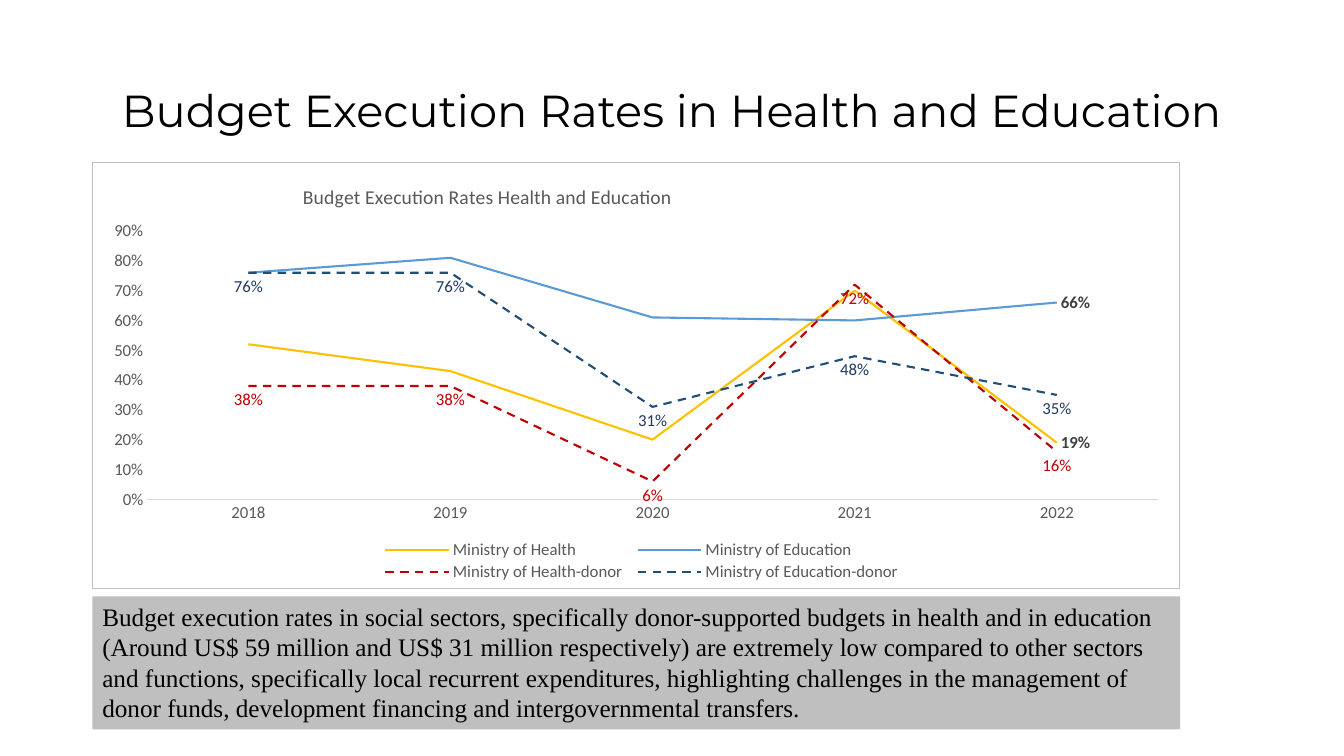
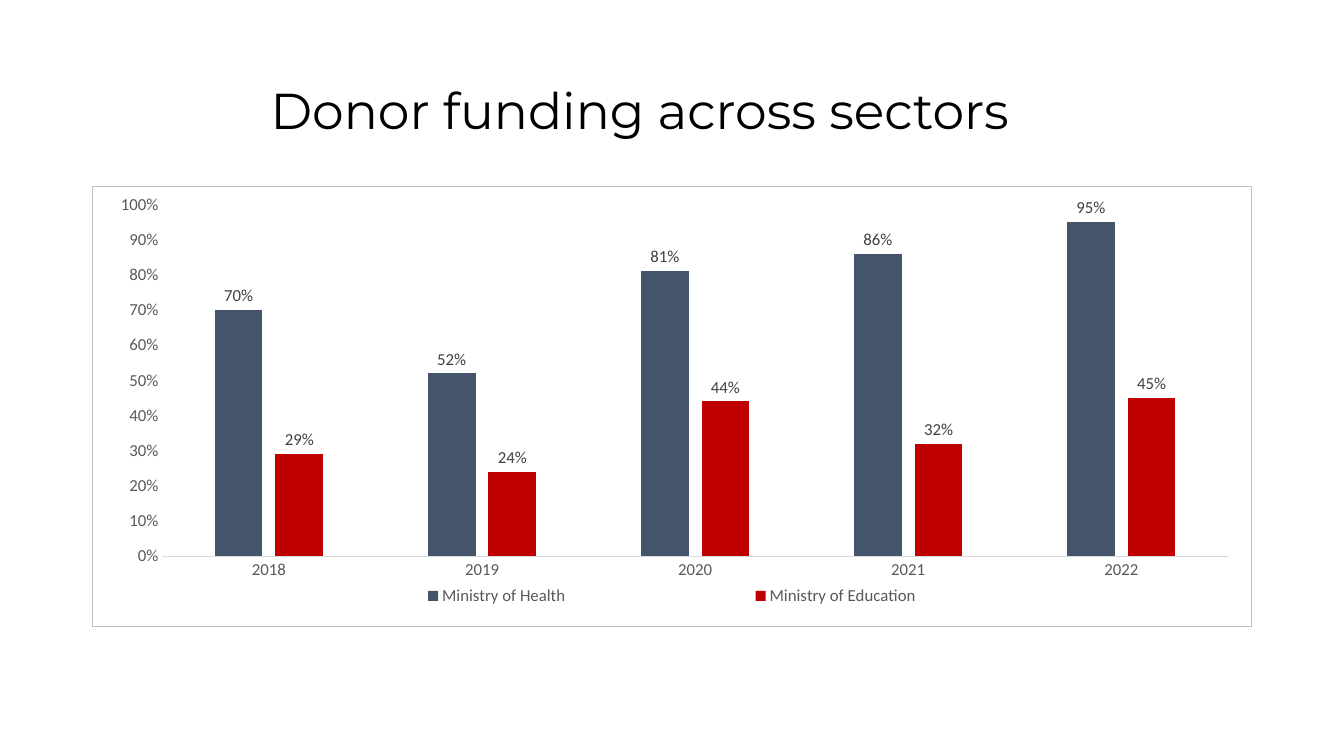
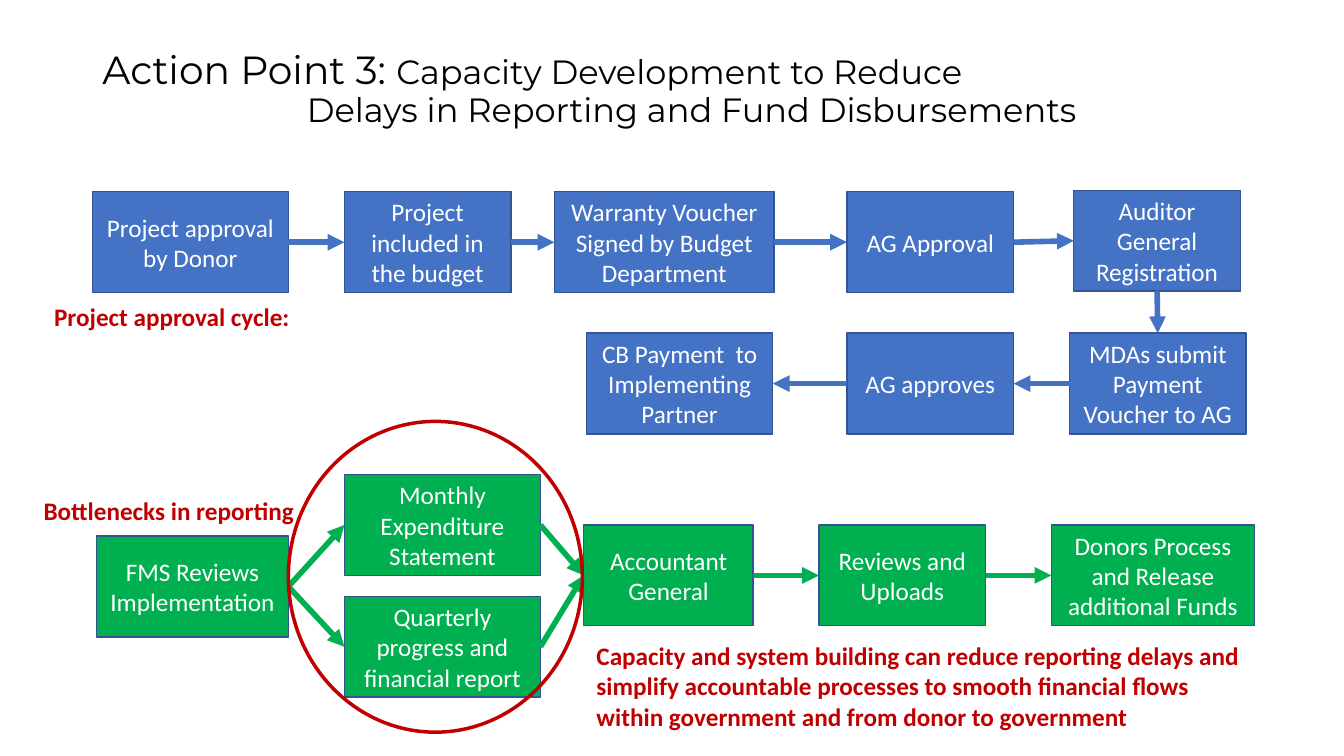
from dataclasses import dataclass

from lxml import etree
from pptx import Presentation
from pptx.chart.data import CategoryChartData
from pptx.dml.color import RGBColor
from pptx.enum.chart import (XL_CHART_TYPE, XL_LABEL_POSITION, XL_LEGEND_POSITION,
                             XL_MARKER_STYLE, XL_TICK_MARK)
from pptx.enum.dml import MSO_LINE
from pptx.enum.shapes import MSO_CONNECTOR, MSO_SHAPE
from pptx.enum.text import MSO_ANCHOR, MSO_AUTO_SIZE, PP_ALIGN
from pptx.oxml import parse_xml
from pptx.oxml.ns import nsdecls, qn
from pptx.util import Pt

LINE, COLUMN = XL_CHART_TYPE.LINE, XL_CHART_TYPE.COLUMN_CLUSTERED
BELOW, RIGHT_OF = XL_LABEL_POSITION.BELOW, XL_LABEL_POSITION.RIGHT
ABOVE = XL_LABEL_POSITION.OUTSIDE_END
BOTTOM, NO_TICK = XL_LEGEND_POSITION.BOTTOM, XL_TICK_MARK.NONE
NO_MARK, DASH = XL_MARKER_STYLE.NONE, MSO_LINE.DASH
STRAIGHT = MSO_CONNECTOR.STRAIGHT
RECT, OVAL = MSO_SHAPE.RECTANGLE, MSO_SHAPE.OVAL
MIDDLE, NO_FIT = MSO_ANCHOR.MIDDLE, MSO_AUTO_SIZE.NONE
LEFT, CENTER = PP_ALIGN.LEFT, PP_ALIGN.CENTER
SITE_TOP, SITE_LEFT, SITE_BOTTOM, SITE_RIGHT = range(4)


@dataclass(frozen=True)
class Theme:
    head: str = "Montserrat"
    body: str = "Calibri"
    serif: str = "Times New Roman"
    black: str = "000000"
    white: str = "FFFFFF"
    gray: str = "BFBFBF"
    axis: str = "D9D9D9"
    soft: str = "595959"
    dark: str = "404040"
    red: str = "C00000"
    gold: str = "FFC000"
    sky: str = "5B9BD5"
    navy: str = "1F4E79"
    ink: str = "203864"
    slate: str = "44546A"
    blue: str = "4472C4"
    edge: str = "325491"
    green: str = "00B050"
    text: float = 18
    small: float = 12
    mid: float = 14


T = Theme()
YEARS = ["2018", "2019", "2020", "2021", "2022"]


def rgb(code):
    return RGBColor.from_string(code)


def style(font, size, color, name=T.body, bold=False):
    font.size, font.name, font.bold = Pt(size), name, bold
    font.color.rgb = rgb(color)


def place(part, index, x, y, w=None, h=None):
    """Give a chart part a manual layout, in fractions of the chart."""
    old = part.find(qn("c:layout"))
    if old is not None:
        part.remove(old)
    lay = etree.Element(qn("c:layout"))
    box = etree.SubElement(lay, qn("c:manualLayout"))
    items = [("xMode", "edge"), ("yMode", "edge"), ("x", x), ("y", y)]
    if w:
        items += [("w", w), ("h", h)]
    if part.tag == qn("c:plotArea"):
        items.insert(0, ("layoutTarget", "inner"))
    for tag, val in items:
        etree.SubElement(box, qn("c:" + tag)).set("val", str(val))
    part.insert(index, lay)


class Deck:
    def __init__(self):
        self.prs = Presentation()
        self.prs.slide_width, self.prs.slide_height = Pt(960), Pt(540)
        self.slide = None

    def page(self, at, lines, align=CENTER):
        """Add a slide; each title line is (indent, [(text, size), ...])."""
        self.slide = self.prs.slides.add_slide(self.prs.slide_layouts[5])
        title = self.slide.shapes.title
        title.left, title.top, title.width, title.height = map(Pt, at)
        frame = title.text_frame
        frame.word_wrap, frame.auto_size = True, NO_FIT
        frame.vertical_anchor = MIDDLE
        for i, (indent, parts) in enumerate(lines):
            para = frame.add_paragraph() if i else frame.paragraphs[0]
            para.alignment, para.line_spacing = align, 0.9
            para._p.get_or_add_pPr().set("marL", str(Pt(indent)))
            for text, size in parts:
                run = para.add_run()
                run.text = text
                style(run.font, size, T.black, T.head)

    def text(self, at, words, color=T.red, font=T.body, bold=True, fill=None):
        box = self.slide.shapes.add_textbox(*map(Pt, at))
        if fill:
            box.fill.solid()
            box.fill.fore_color.rgb = rgb(fill)
        frame = box.text_frame
        frame.word_wrap, frame.text = True, words
        style(frame.paragraphs[0].runs[0].font, T.text, color, font, bold)

    def shape(self, kind, at, fill, edge, width):
        item = self.slide.shapes.add_shape(kind, *map(Pt, at))
        item.shadow.inherit = False
        if fill:
            item.fill.solid()
            item.fill.fore_color.rgb = rgb(fill)
        else:
            item.fill.background()
        item.line.color.rgb, item.line.width = rgb(edge), Pt(width)
        return item

    def step(self, words, x, y, width, color):
        box = self.shape(RECT, (x, y, width, 72), color, T.edge, 1)
        frame = box.text_frame
        frame.word_wrap, frame.text = True, words
        frame.vertical_anchor = MIDDLE
        para = frame.paragraphs[0]
        para.alignment = CENTER
        style(para.runs[0].font, T.text, T.white)
        return box

    def arrow(self, start, end, color, out=SITE_RIGHT, into=SITE_LEFT):
        link = self.slide.shapes.add_connector(STRAIGHT, 0, 0, 0, 0)
        link.begin_connect(start, out)
        link.end_connect(end, into)
        link.line.color.rgb, link.line.width = rgb(color), Pt(4)
        tail = etree.SubElement(link.line._get_or_add_ln(), qn("a:tailEnd"))
        tail.set("type", "triangle")
        etree.SubElement(link._element.spPr, qn("a:effectLst"))

    def chart(self, kind, at, rows, top, plot, key):
        """Add a framed percent chart; plot and key are layout fractions."""
        data = CategoryChartData(number_format="0%")
        data.categories = YEARS
        for name, vals in rows:
            data.add_series(name, vals)
        chart = self.slide.shapes.add_chart(kind, *map(Pt, at), data).chart
        style(chart.font, T.small, T.black)
        chart.has_title = False
        chart.has_legend = True
        legend = chart.legend
        legend.position, legend.include_in_layout = BOTTOM, False
        style(legend.font, T.small, T.soft)
        cats, vals = chart.category_axis, chart.value_axis
        for axis in (cats, vals):
            axis.major_tick_mark = axis.minor_tick_mark = NO_TICK
            axis.has_major_gridlines = False
            style(axis.tick_labels.font, T.small, T.soft)
        cats.format.line.color.rgb = rgb(T.axis)
        cats.format.line.width = Pt(0.75)
        vals.format.line.fill.background()
        vals.minimum_scale, vals.maximum_scale, vals.major_unit = 0, top, 0.1
        vals.tick_labels.number_format = "0%"
        vals.tick_labels.number_format_is_linked = False
        chart.plots[0].vary_by_categories = False
        root = chart.element.find(qn("c:chart"))
        place(root.find(qn("c:plotArea")), 0, *plot)
        place(root.find(qn("c:legend")), 1, *key)
        root.addnext(parse_xml(
            f'<c:spPr {nsdecls("c", "a")}><a:solidFill><a:srgbClr val="{T.white}"/>'
            f'</a:solidFill><a:ln w="{Pt(0.75)}"><a:solidFill>'
            f'<a:srgbClr val="{T.gray}"/></a:solidFill></a:ln></c:spPr>'))
        return chart

    def labels(self, series, color, spot):
        tags = series.data_labels
        tags.show_value, tags.position = True, spot
        tags.number_format, tags.number_format_is_linked = "0%", False
        style(tags.font, T.small, color)


def rates(deck):
    deck.page((66, 29, 828, 104),
              [(0, [("Budget Execution Rates in Health and Education", 32)])])
    rows = [
        ("Ministry of Health", (0.52, 0.43, 0.20, 0.70, 0.19)),
        ("Ministry of Education", (0.76, 0.81, 0.61, 0.60, 0.66)),
        ("Ministry of Health-donor", (0.38, 0.38, 0.06, 0.72, 0.16)),
        ("Ministry of Education-donor", (0.76, 0.76, 0.31, 0.48, 0.35)),
    ]
    chart = deck.chart(LINE, (66, 116, 777, 305), rows, 0.9,
                       (0.05, 0.16, 0.93, 0.63), (0.26, 0.88, 0.49, 0.11))
    chart.has_title = True
    frame = chart.chart_title.text_frame
    frame.text = "Budget Execution Rates Health and Education"
    style(frame.paragraphs[0].runs[0].font, T.mid, T.soft)
    place(chart.element.find(qn("c:chart")).find(qn("c:title")), 1, 0.19, 0.04)
    looks = [(T.gold, None), (T.sky, None), (T.red, T.red), (T.navy, T.ink)]
    for series, (color, tag) in zip(chart.plots[0].series, looks):
        series.smooth = False
        series.marker.style = NO_MARK
        line = series.format.line
        line.color.rgb, line.width = rgb(color), Pt(1.5)
        if tag:
            line.dash_style = DASH
            deck.labels(series, tag, BELOW)
        else:
            series.data_labels.show_value = False
            last = series.points[4].data_label
            style(last.font, T.small, T.dark, bold=True)
            last.position = RIGHT_OF
    deck.text((66, 426, 777, 95),
              "Budget execution rates in social sectors, specifically donor-supported "
              "budgets in health and in education (Around US$ 59 million and US$ 31 "
              "million respectively) are extremely low compared to other sectors and "
              "functions, specifically local recurrent expenditures, highlighting "
              "challenges in the management of donor funds, development financing and "
              "intergovernmental transfers.", T.black, T.serif, False, T.gray)


def funding(deck):
    deck.page((99, 29, 716, 104), [(0, [("Donor funding across sectors", 36)])])
    rows = [
        ("Ministry of Health", (0.70, 0.52, 0.81, 0.86, 0.95)),
        ("Ministry of Education", (0.29, 0.24, 0.44, 0.32, 0.45)),
    ]
    chart = deck.chart(COLUMN, (66, 133, 828, 315), rows, 1,
                       (0.06, 0.04, 0.92, 0.8), (0.13, 0.9, 0.74, 0.06))
    plot = chart.plots[0]
    plot.gap_width, plot.overlap = 219, -27
    for series, color in zip(plot.series, (T.slate, T.red)):
        series.format.fill.solid()
        series.format.fill.fore_color.rgb = rgb(color)
        deck.labels(series, T.dark, ABOVE)


def action(deck):
    deck.page((66, 29, 824, 71), [
        (0, [("Action Point 3: ", 28), ("Capacity Development to Reduce", 24)]),
        (146, [("Delays in Reporting and Fund Disbursements", 24)]),
    ], LEFT)

    cycle = [deck.step(*item, T.blue) for item in (
        ("Project approval by Donor", 66, 137, 140),
        ("Project included in the budget", 246, 137, 119),
        ("Warranty Voucher Signed by Budget Department", 396, 137, 157),
        ("AG Approval", 605, 137, 119),
        ("Auditor General Registration", 767, 136, 119),
        ("MDAs submit Payment Voucher to AG", 764, 238, 126),
        ("AG approves", 605, 238, 119),
        ("CB Payment  to Implementing Partner", 419, 238, 133),
    )]
    turns = ([(SITE_RIGHT, SITE_LEFT)] * 4 + [(SITE_BOTTOM, SITE_TOP)]
             + [(SITE_LEFT, SITE_RIGHT)] * 2)
    for start, end, sites in zip(cycle, cycle[1:], turns):
        deck.arrow(start, end, T.blue, *sites)

    review, month, quarter, account, upload, release = [
        deck.step(*item, T.green) for item in (
            ("FMS Reviews Implementation", 69, 383, 137),
            ("Monthly Expenditure Statement", 246, 339, 140),
            ("Quarterly progress and financial report", 246, 426, 140),
            ("Accountant General", 417, 375, 121),
            ("Reviews and Uploads", 585, 375, 119),
            ("Donors Process and Release additional Funds", 751, 375, 145),
        )]
    for start, end in ((review, month), (review, quarter), (quarter, account),
                       (month, account), (account, upload), (upload, release)):
        deck.arrow(start, end, T.green)

    deck.shape(OVAL, (206, 301, 210, 222), None, T.red, 2.5)
    deck.text((24, 350, 217, 29), "Bottlenecks in reporting")
    deck.text((31.5, 212, 217, 29), "Project approval cycle:")
    deck.text((419, 454, 477, 73),
              "Capacity and system building can reduce reporting delays and simplify "
              "accountable processes to smooth financial flows within government and "
              "from donor to government")


def main():
    deck = Deck()
    for build in (rates, funding, action):
        build(deck)
    deck.prs.save("out.pptx")


if __name__ == "__main__":
    main()
